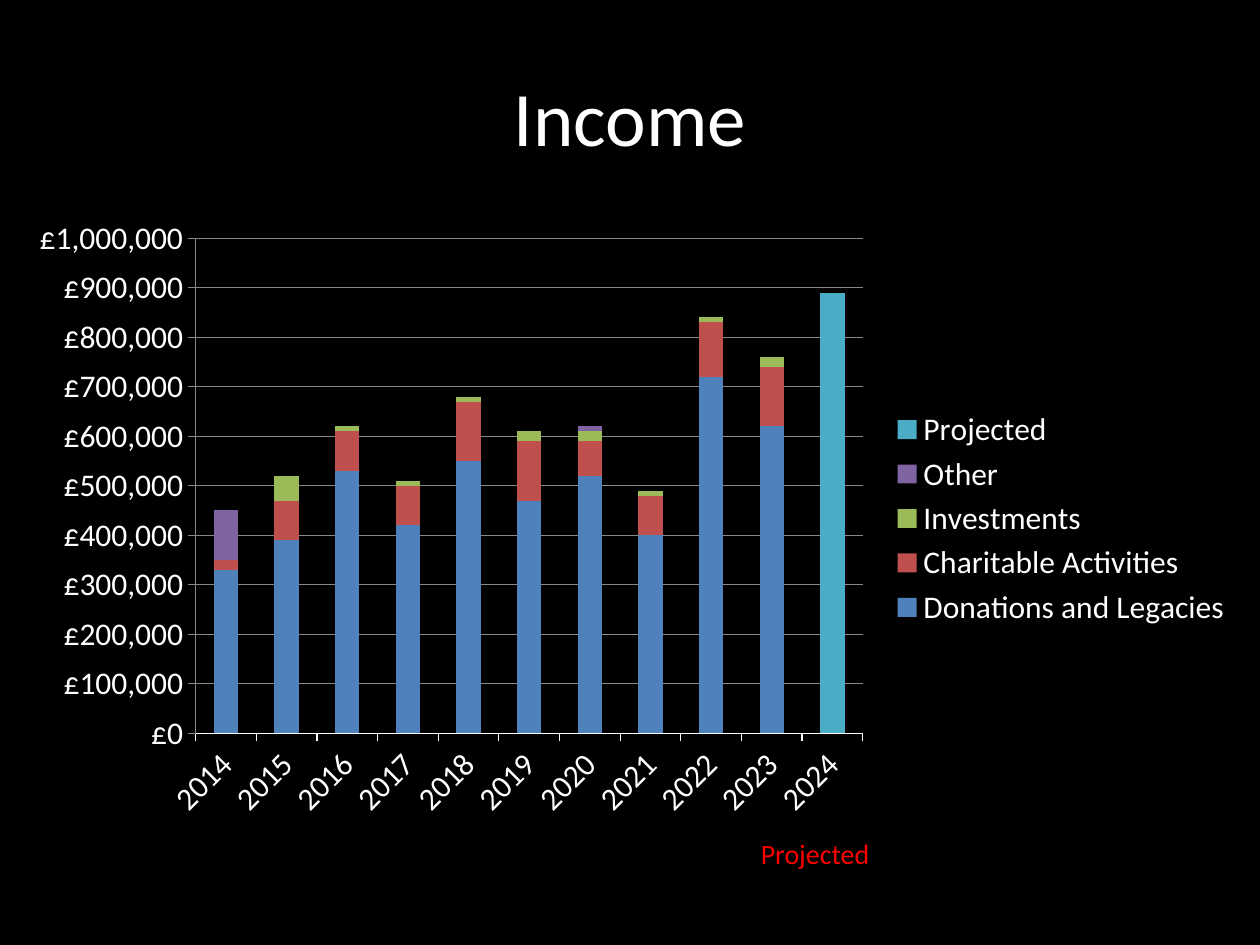
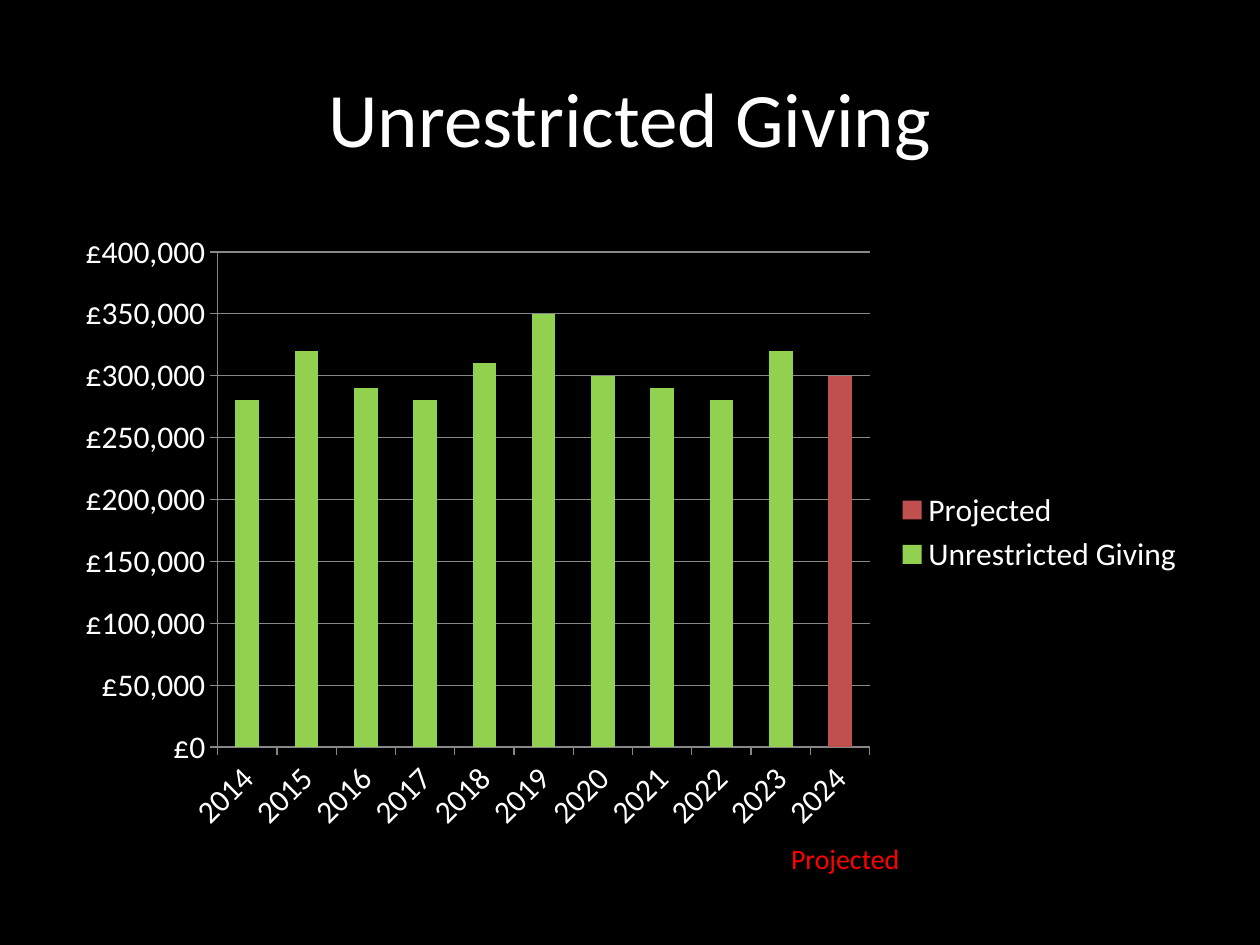
import pptx
import pptx.chart.data
import pptx.dml.color
import pptx.enum.chart
import pptx.enum.text
import pptx.util

FONT = "Calibri"
BLACK, WHITE, RED, GREY = "000000", "FFFFFF", "FF0000", "878787"
YEARS = [str(year) for year in range(2014, 2025)]
PROJECTED = "Projected"
PAST = [None] * (len(YEARS) - 1)

# Series values are in thousands of pounds; places are percentages of the slide.
PAGES = [
    {
        "title": "Income",
        "title_place": (5, 3.87, 90, 16.67),
        "chart_place": (1.2, 21.87, 97.6, 66),
        "note_place": (59.4, 87.87, 10.8, 4.93),
        "top": 1000, "step": 100, "year_line": WHITE,
        "series": [
            ("Donations and Legacies", "4F81BD",
             [330, 390, 530, 420, 550, 470, 520, 400, 720, 620, None]),
            ("Charitable Activities", "C0504D",
             [20, 80, 80, 80, 120, 120, 70, 80, 110, 120, None]),
            ("Investments", "9BBB59",
             [0, 50, 10, 10, 10, 20, 20, 10, 10, 20, None]),
            ("Other", "8064A2",
             [100, 0, 0, 0, 0, 0, 10, 0, 0, 0, None]),
            (PROJECTED, "4BACC6", PAST + [890]),
        ],
    },
    {
        "title": "Unrestricted Giving",
        "title_place": (5, 4, 90, 16.67),
        "chart_place": (5, 23.33, 90, 66),
        "note_place": (61.8, 88.4, 10.8, 4.93),
        "top": 400, "step": 50, "year_line": GREY,
        "series": [
            ("Unrestricted Giving", "92D050",
             [280, 320, 290, 280, 310, 350, 300, 290, 280, 320, None]),
            (PROJECTED, "C0504D", PAST + [300]),
        ],
    },
]

deck = pptx.Presentation()
deck.slide_width = pptx.util.Inches(10)
deck.slide_height = pptx.util.Inches(7.5)


def color(hex_code):
    return pptx.dml.color.RGBColor.from_string(hex_code)


def place(shares):
    sides = (deck.slide_width, deck.slide_height) * 2
    return [round(side * share / 100) for side, share in zip(sides, shares)]


def style(font, size, hex_code):
    font.name = FONT
    font.size = pptx.util.Pt(size)
    font.color.rgb = color(hex_code)


def pounds(thousands):
    return None if thousands is None else thousands * 1000


def add_title(slide, page):
    title = slide.shapes.title
    title.left, title.top, title.width, title.height = place(page["title_place"])
    title.text_frame.text = page["title"]
    title.text_frame.vertical_anchor = pptx.enum.text.MSO_ANCHOR.MIDDLE
    heading = title.text_frame.paragraphs[0]
    heading.alignment = pptx.enum.text.PP_ALIGN.CENTER
    style(heading.runs[0].font, 44, WHITE)


def style_axis(axis, line_color):
    axis.major_tick_mark = pptx.enum.chart.XL_TICK_MARK.OUTSIDE
    axis.minor_tick_mark = pptx.enum.chart.XL_TICK_MARK.NONE
    axis.format.line.color.rgb = color(line_color)
    axis.format.line.width = pptx.util.Pt(0.75)
    style(axis.tick_labels.font, 18, WHITE)


def add_chart(slide, page):
    figures = pptx.chart.data.CategoryChartData()
    figures.categories = YEARS
    for name, _, values in page["series"]:
        figures.add_series(name, [pounds(value) for value in values])
    chart = slide.shapes.add_chart(
        pptx.enum.chart.XL_CHART_TYPE.COLUMN_STACKED,
        *place(page["chart_place"]), figures).chart
    chart.has_title = False
    style(chart.font, 18, WHITE)

    bars = chart.plots[0]
    bars.gap_width, bars.overlap = 150, 100
    bars.vary_by_categories = False
    for series, (_, fill_color, _) in zip(bars.series, page["series"]):
        series.format.fill.solid()
        series.format.fill.fore_color.rgb = color(fill_color)

    years, amounts = chart.category_axis, chart.value_axis
    style_axis(years, page["year_line"])
    years.tick_labels.font._element.getparent().getparent().getparent().bodyPr.set("rot", "-2700000")
    style_axis(amounts, GREY)
    amounts.minimum_scale = 0
    amounts.maximum_scale = pounds(page["top"])
    amounts.major_unit = pounds(page["step"])
    amounts.tick_labels.number_format = '"£"#,##0'
    amounts.tick_labels.number_format_is_linked = False
    amounts.has_major_gridlines = True
    amounts.major_gridlines.format.line.color.rgb = color(GREY)
    amounts.major_gridlines.format.line.width = pptx.util.Pt(0.75)

    chart.has_legend = True
    chart.legend.position = pptx.enum.chart.XL_LEGEND_POSITION.RIGHT
    chart.legend.include_in_layout = False
    style(chart.legend.font, 18, WHITE)


def add_note(slide, page):
    note = slide.shapes.add_textbox(*place(page["note_place"])).text_frame
    note.text = PROJECTED
    note.word_wrap = False
    note.auto_size = pptx.enum.text.MSO_AUTO_SIZE.SHAPE_TO_FIT_TEXT
    style(note.paragraphs[0].runs[0].font, 16, RED)


def main():
    backdrop = deck.slide_master.background.fill
    backdrop.solid()
    backdrop.fore_color.rgb = color(BLACK)
    title_only = deck.slide_layouts.get_by_name("Title Only")
    for page in PAGES:
        slide = deck.slides.add_slide(title_only)
        add_title(slide, page)
        add_chart(slide, page)
        add_note(slide, page)
    deck.save("out.pptx")


if __name__ == "__main__":
    main()
